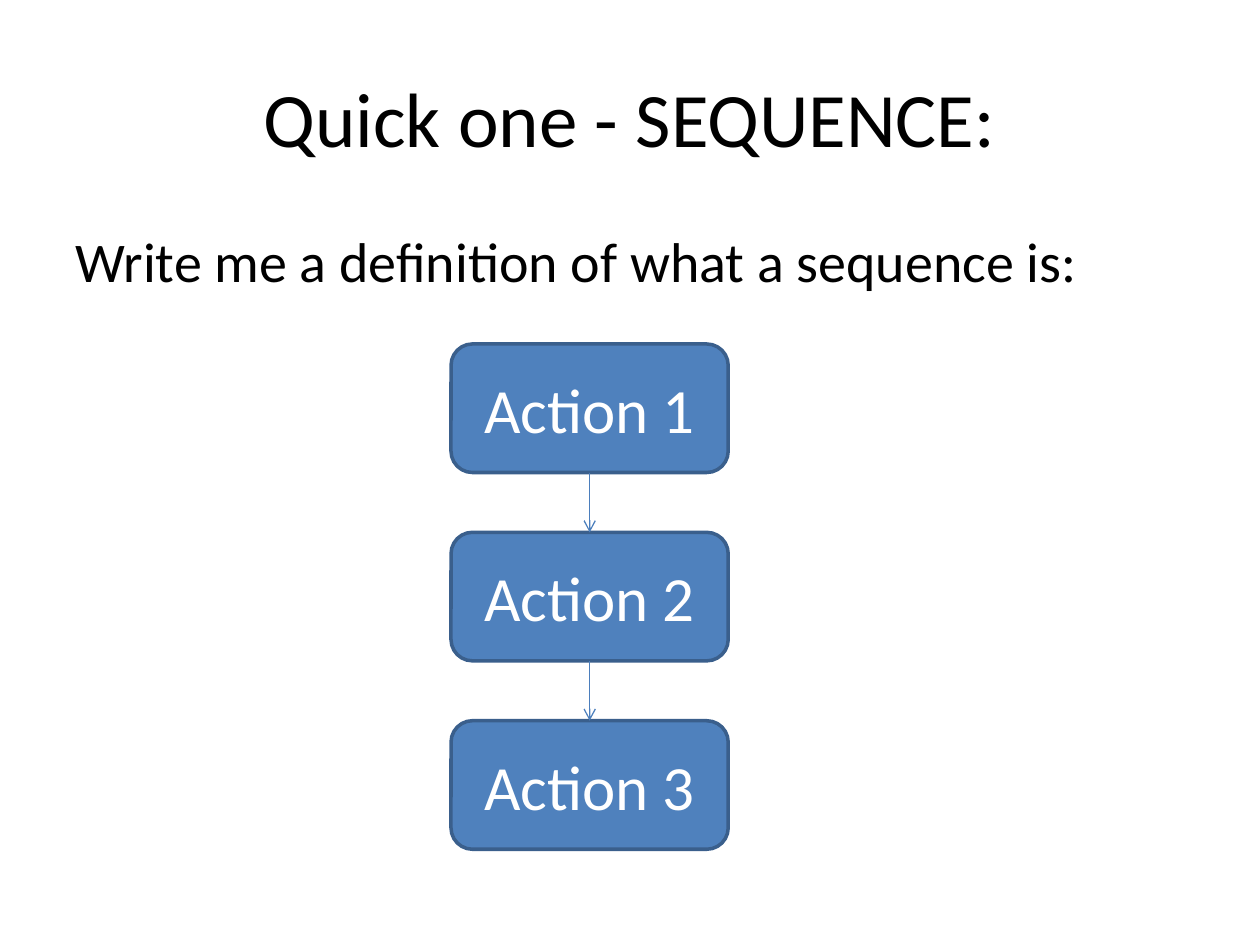
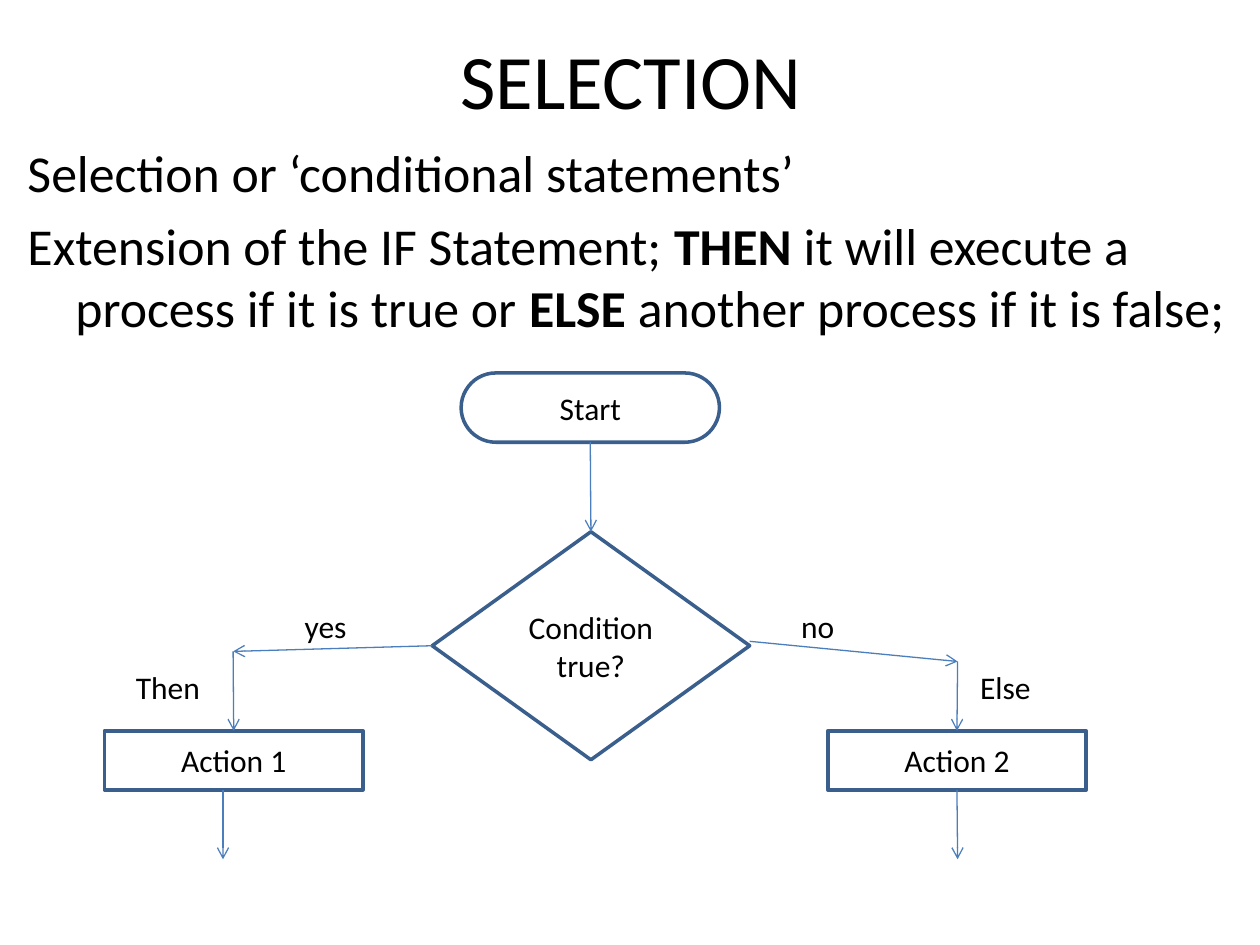
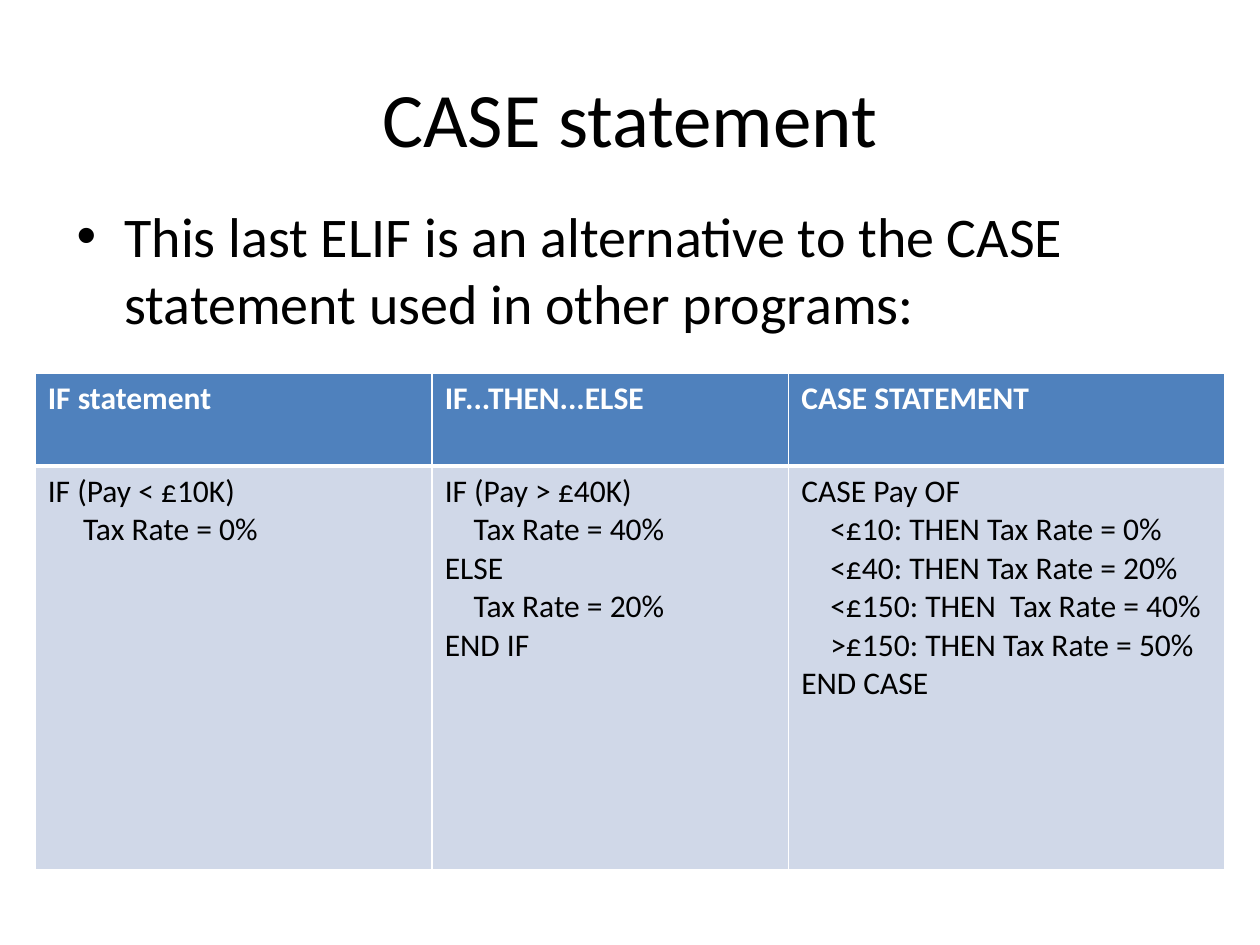
"""Build three slides on sequence, selection and the CASE statement."""
from lxml.etree import SubElement
from pptx import Presentation
from pptx.dml.color import RGBColor
from pptx.enum.shapes import MSO_CONNECTOR, MSO_SHAPE as SHAPE
from pptx.enum.text import MSO_ANCHOR as ANCHOR, PP_ALIGN as ALIGN
from pptx.oxml.ns import qn
from pptx.util import Inches, Pt

FONT = "Calibri"
COLORS = {"text": "000000", "white": "FFFFFF", "accent": "4F81BD",
          "outline": "3A5F8C", "arrow": "4B7EBC", "band": "D0D8E8"}
TOP, LEFT, BOTTOM, RIGHT = range(4)
HANGING = 0.38

SEQUENCE_BODY = [[("Write me a definition of what a sequence is:", False)]]
ACTIONS = ["Action 1", "Action 2", "Action 3"]

SELECTION_BODY = [
    [("Selection or ‘conditional statements’", False)],
    [("Extension of the IF Statement; ", False), ("THEN", True),
     (" it will execute a process if it is true or ", False), ("ELSE", True),
     (" another process if it is false;", False)],
]
FLOW_NODES = [
    ("Start", SHAPE.ROUNDED_RECTANGLE, (3.66, 2.96, 2.05, 0.55)),
    ("Condition true?", SHAPE.DIAMOND, (3.43, 4.22, 2.52, 1.81)),
    ("Action 2", SHAPE.RECTANGLE, (6.57, 5.8, 2.05, 0.47)),
    ("Action 1", SHAPE.RECTANGLE, (0.83, 5.8, 2.05, 0.47)),
]
FLOW_ARROWS = [
    (("Start", BOTTOM), ("Condition true?", TOP)),
    ((1.85, 5.17), ("Action 1", TOP)),
    ((7.6, 5.25), ("Action 2", TOP)),
    ((5.95, 5.09), (7.6, 5.25)),
    (("Condition true?", LEFT), (1.85, 5.17)),
    (("Action 2", BOTTOM), (7.6, 6.82)),
    ((1.77, 6.27), (1.77, 6.82)),
]
FLOW_LABELS = [("no", 6.26, 4.77, 0.71), ("yes", 2.32, 4.77, 0.71),
               ("Then", 0.98, 5.25, 0.87), ("Else", 7.68, 5.25, 0.87)]

CASE_BODY = [[("This last ELIF is an alternative to the CASE statement "
               "used in other programs:", False)]]
CASE_COLUMNS = [
    ("IF statement", 3.15, 0.28, [(0, "IF (Pay < £10K)"), (1, "Tax Rate = 0%")]),
    ("IF...THEN...ELSE", 2.83, 0.23,
     [(0, "IF (Pay > £40K)"), (1, "Tax Rate = 40%"), (0, "ELSE"),
      (1, "Tax Rate = 20%"), (0, "END IF")]),
    ("CASE STATEMENT", 3.46, 0.23,
     [(0, "CASE Pay OF"), (1, "<£10: THEN Tax Rate = 0%"),
      (1, "<£40: THEN Tax Rate = 20%"), (1, "<£150: THEN  Tax Rate = 40%"),
      (1, ">£150: THEN Tax Rate = 50%"), (0, "END CASE")]),
]
CASE_ROWS = [0.74, 3.2]


def rgb(name):
    return RGBColor.from_string(COLORS[name])


def add_span(para, text, size, color="text", bold=False):
    span = para.add_run()
    span.text = text
    span.font.name, span.font.size, span.font.bold = FONT, Pt(size), bold
    span.font.color.rgb = rgb(color)


def add_box(page, place, anchor=ANCHOR.TOP):
    frame = page.shapes.add_textbox(*map(Inches, place)).text_frame
    frame.word_wrap = True
    frame.vertical_anchor = anchor
    return frame


def paragraphs(frame, items):
    """Yield each item with its own paragraph, using the first one that exists."""
    for index, item in enumerate(items):
        yield frame.add_paragraph() if index else frame.paragraphs[0], item


def indent(para, margin, first=0):
    props = para._p.get_or_add_pPr()
    props.set("marL", str(Inches(margin)))
    props.set("indent", str(Inches(first)))
    return props


def add_page(deck, title, title_place=(0.5, 0.3, 9, 1.25)):
    page = deck.slides.add_slide(deck.slide_layouts[6])
    para = add_box(page, title_place, ANCHOR.MIDDLE).paragraphs[0]
    para.alignment = ALIGN.CENTER
    add_span(para, title, 44)
    return page


def add_body(page, place, content, size=32, bullet=None):
    for para, spans in paragraphs(add_box(page, place), content):
        para.space_before = Pt(size * 0.2)
        props = indent(para, HANGING, -HANGING)
        if bullet:
            SubElement(props, qn("a:buFont"), typeface="Arial")
            SubElement(props, qn("a:buChar"), char=bullet)
        for text, bold in spans:
            add_span(para, text, size, bold=bold)


def add_node(page, kind, place, text, size, fill, color):
    node = page.shapes.add_shape(kind, *map(Inches, place))
    node.shadow.inherit = False
    node.fill.solid()
    node.fill.fore_color.rgb = rgb(fill)
    node.line.color.rgb = rgb("outline")
    node.line.width = Pt(2)
    para = node.text_frame.paragraphs[0]
    para.alignment = ALIGN.CENTER
    add_span(para, text, size, color)
    return node


def add_arrow(page, nodes, start, end):
    """Draw an arrow; each end is a point or a (node name, side) pair."""
    points = [(0, 0) if isinstance(stop[0], str) else stop for stop in (start, end)]
    arrow = page.shapes.add_connector(
        MSO_CONNECTOR.STRAIGHT, *(Inches(value) for point in points for value in point))
    for stop, connect in ((start, arrow.begin_connect), (end, arrow.end_connect)):
        if isinstance(stop[0], str):
            connect(nodes[stop[0]], stop[1])
    arrow.line.color.rgb = rgb("arrow")
    arrow.line.width = Pt(0.75)
    SubElement(arrow.line._get_or_add_ln(), qn("a:tailEnd"), type="arrow")
    SubElement(arrow._element.spPr, qn("a:effectLst"))


def style_cell(cell, fill, widths):
    props = cell._tc.get_or_add_tcPr()
    for side, width in zip("LRTB", widths):
        border = SubElement(props, qn(f"a:ln{side}"), w=str(Pt(width)))
        paint = SubElement(border, qn("a:solidFill"))
        SubElement(paint, qn("a:srgbClr"), val=COLORS["white"])
    cell.fill.solid()
    cell.fill.fore_color.rgb = rgb(fill)


def build_sequence(deck):
    page = add_page(deck, "Quick one - SEQUENCE:")
    add_body(page, (0.5, 1.75, 9, 4.95), SEQUENCE_BODY)
    nodes = {}
    for index, name in enumerate(ACTIONS):
        place = (3.58, 2.73 + index * 1.495, 2.2, 1.02)
        nodes[name] = add_node(page, SHAPE.ROUNDED_RECTANGLE, place, name, 36,
                               "accent", "white")
    for upper, lower in zip(ACTIONS, ACTIONS[1:]):
        add_arrow(page, nodes, (upper, BOTTOM), (lower, TOP))


def build_selection(deck):
    page = add_page(deck, "SELECTION", (0.51, 0, 9, 1.25))
    add_body(page, (0.12, 1.07, 9.8, 1.89), SELECTION_BODY, 29.6)
    nodes = {name: add_node(page, kind, place, name, 18, "white", "text")
             for name, kind, place in FLOW_NODES}
    nodes["Start"].adjustments[0] = 0.5
    for start, end in FLOW_ARROWS:
        add_arrow(page, nodes, start, end)
    for text, left, top, width in FLOW_LABELS:
        add_span(add_box(page, (left, top, width, 0.4)).paragraphs[0], text, 18)


def build_case(deck):
    page = add_page(deck, "CASE statement")
    add_body(page, (0.51, 1.55, 9, 1.29), CASE_BODY, bullet="•")
    place = (0.28, 2.96, 9.45, sum(CASE_ROWS))
    table = page.shapes.add_table(
        len(CASE_ROWS), len(CASE_COLUMNS), *map(Inches, place)).table
    for row, height in zip(table.rows, CASE_ROWS):
        row.height = Inches(height)
    for index, (heading, width, step, lines) in enumerate(CASE_COLUMNS):
        table.columns[index].width = Inches(width)
        head, body = table.cell(0, index), table.cell(1, index)
        style_cell(head, "accent", (1, 1, 1, 3))
        style_cell(body, "band", (1, 1, 3, 1))
        add_span(head.text_frame.paragraphs[0], heading, 18, "white", True)
        for para, (level, text) in paragraphs(body.text_frame, lines):
            indent(para, level * step)
            add_span(para, text, 18)


def main():
    deck = Presentation()
    deck.slide_width, deck.slide_height = Inches(10), Inches(7.5)
    build_sequence(deck)
    build_selection(deck)
    build_case(deck)
    deck.save("out.pptx")


if __name__ == "__main__":
    main()
